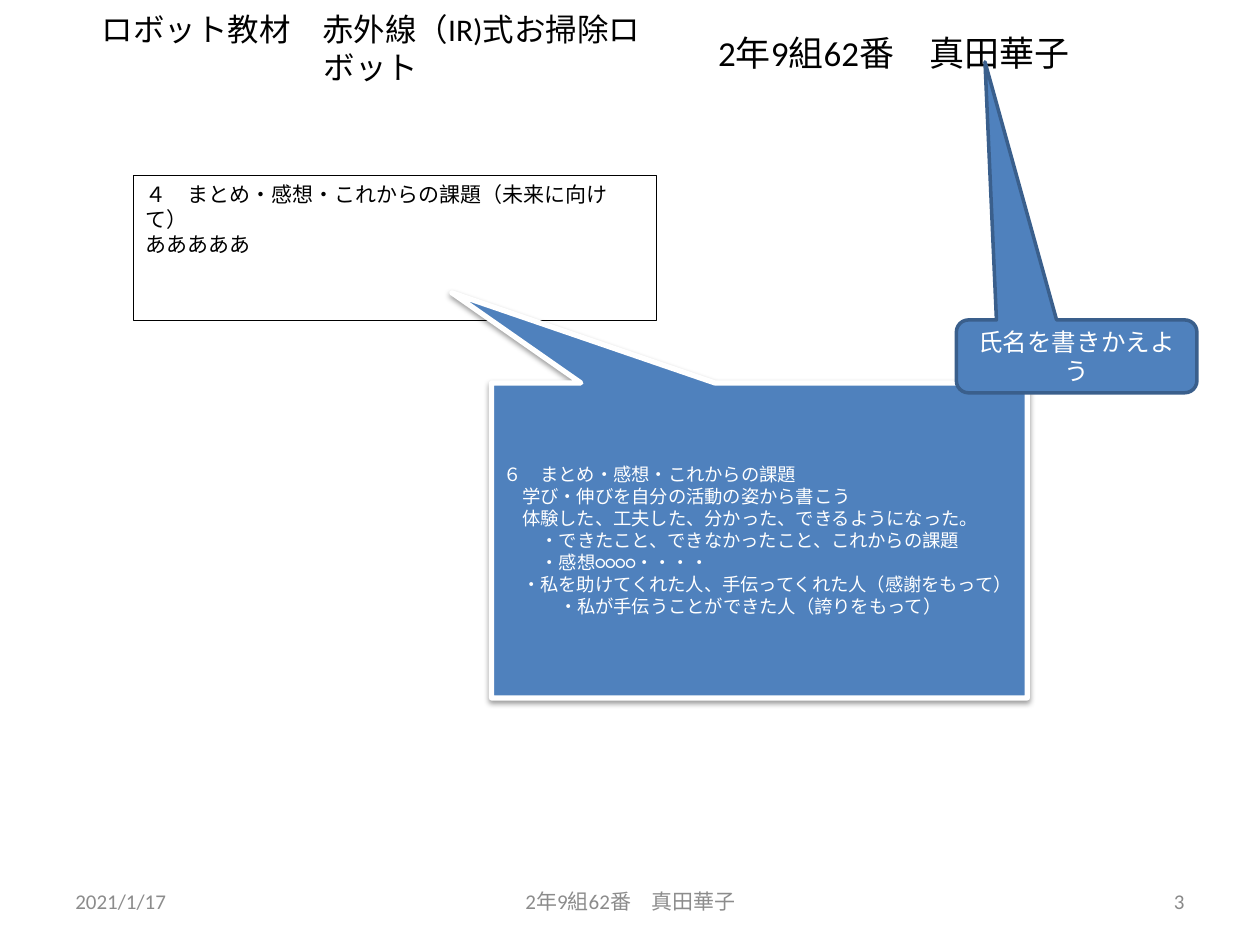
import pptx
import pptx.util
import pptx.dml.color
import pptx.enum.shapes
import pptx.enum.text
import pptx.oxml
import pptx.oxml.ns

Cm, Pt = pptx.util.Cm, pptx.util.Pt
Kind = pptx.enum.shapes.MSO_SHAPE
Align = pptx.enum.text.PP_ALIGN
Anchor = pptx.enum.text.MSO_ANCHOR
LEFT, MID, RIGHT = Align.LEFT, Align.CENTER, Align.RIGHT

LATIN, ASIAN = "Calibri", "Noto Sans CJK JP"
NAME = "2年9組62番　真田華子"
STEP = 0.37  # one indent level, cm

TITLE = {"at": (1.27, 0.48, 12.42, 0.97), "size": 18, "align": MID,
         "lines": [(0, "ロボット教材　赤外線（IR)式お掃除ロボット")]}

# Plain text: place, size, colour, alignment, words
TEXTS = [
    ((1.27, 17.65, 5.92, 1.02), 12, "8C8C8C", LEFT, "2021/1/17"),
    ((8.69, 17.65, 8.05, 1.02), 12, "8C8C8C", MID, NAME),
    ((18.21, 17.65, 5.92, 1.02), 12, "898989", RIGHT, "3"),
    ((12.8, 0.28, 10.44, 1.55), 20, "000000", MID, NAME),
]

# Boxes: lines are (indent level, words)
BOXES = [
    {"kind": Kind.RECTANGLE, "at": (2.69, 3.53, 10.54, 2.92),
     "fill": "FFFFFF", "line": ("000000", 0.25), "size": 12,
     "color": "000000", "anchor": Anchor.TOP,
     "lines": [(0, "４　まとめ・感想・これからの課題（未来に向けて）"),
               (0, "あああああ")]},
    {"kind": Kind.RECTANGULAR_CALLOUT, "at": (9.91, 7.72, 10.8, 6.35),
     "adj": (-0.574, -0.786), "fill": "4F81BD", "line": ("FFFFFF", 3),
     "size": 10.5, "color": "FFFFFF", "shadow": True,
     "lines": [(0, "６　まとめ・感想・これからの課題"),
               (1, "学び・伸びを自分の活動の姿から書こう"),
               (1, "体験した、工夫した、分かった、できるようになった。"),
               (2, "・できたこと、できなかったこと、これからの課題"),
               (2, "・感想○○○○・・・・"),
               (1, "・私を助けてくれた人、手伝ってくれた人（感謝をもって）"),
               (3, "・私が手伝うことができた人（誇りをもって）")]},
    {"kind": Kind.ROUNDED_RECTANGULAR_CALLOUT, "at": (19.28, 6.45, 4.85, 1.47),
     "adj": (-0.381, -4.039, 0.167), "fill": "4F81BD", "line": ("3A5F8C", 2),
     "size": 14, "color": "FFFFFF", "align": MID,
     "lines": [(0, "氏名を書きかえよう")]},
]

SHADOW = (
    '<a:effectLst %s><a:outerShdw blurRad="%d" dist="%d" dir="5400000" '
    'rotWithShape="0"><a:srgbClr val="000000"><a:alpha val="38000"/>'
    '</a:srgbClr></a:outerShdw></a:effectLst>'
    % (pptx.oxml.ns.nsdecls("a"), Pt(3.1), Pt(1.6)))


def rgb(code):
    return pptx.dml.color.RGBColor.from_string(code)


def put(obj, form):
    """Set each attribute named in form."""
    for key, val in form.items():
        setattr(obj, key, val)


def place(at):
    return [Cm(val) for val in at]


def write(shape, lines, size, color="000000", align=LEFT,
          anchor=Anchor.MIDDLE, asian=LATIN):
    frame = shape.text_frame
    put(frame, {"word_wrap": True, "vertical_anchor": anchor,
                "auto_size": pptx.enum.text.MSO_AUTO_SIZE.NONE})
    frame.text = "\n".join(words for _, words in lines)
    for para, (level, _) in zip(frame.paragraphs, lines):
        para.alignment = align
        if level:
            para._p.get_or_add_pPr().set("marL", str(Cm(level * STEP)))
        font = para.runs[0].font
        put(font, {"name": LATIN, "size": Pt(size)})
        font.color.rgb = rgb(color)
        face = pptx.oxml.parse_xml(
            '<a:ea %s typeface="%s"/>' % (pptx.oxml.ns.nsdecls("a"), asian))
        font._element.find(pptx.oxml.ns.qn("a:latin")).addnext(face)


def draw(shapes, box):
    shape = shapes.add_shape(box["kind"], *place(box["at"]))
    for i, val in enumerate(box.get("adj", ())):
        shape.adjustments[i] = val
    shape.fill.solid()
    shape.fill.fore_color.rgb = rgb(box["fill"])
    color, width = box["line"]
    shape.line.color.rgb = rgb(color)
    shape.line.width = Pt(width)
    shape.shadow.inherit = False
    if box.get("shadow"):
        props = shape._element.spPr
        old = props.find(pptx.oxml.ns.qn("a:effectLst"))
        props.replace(old, pptx.oxml.parse_xml(SHADOW))
    write(shape, box["lines"], box["size"], box["color"],
          box.get("align", LEFT), box.get("anchor", Anchor.MIDDLE))


def main():
    deck = pptx.Presentation()
    put(deck, {"slide_width": Cm(25.4), "slide_height": Cm(19.05)})
    shapes = deck.slides.add_slide(deck.slide_layouts[5]).shapes

    title = shapes.title
    put(title, dict(zip(("left", "top", "width", "height"), place(TITLE["at"]))))
    write(title, TITLE["lines"], TITLE["size"], align=TITLE["align"], asian=ASIAN)

    for at, size, color, align, words in TEXTS:
        write(shapes.add_textbox(*place(at)), [(0, words)], size, color, align)
    for box in BOXES:
        draw(shapes, box)
    deck.save("out.pptx")


if __name__ == "__main__":
    main()
